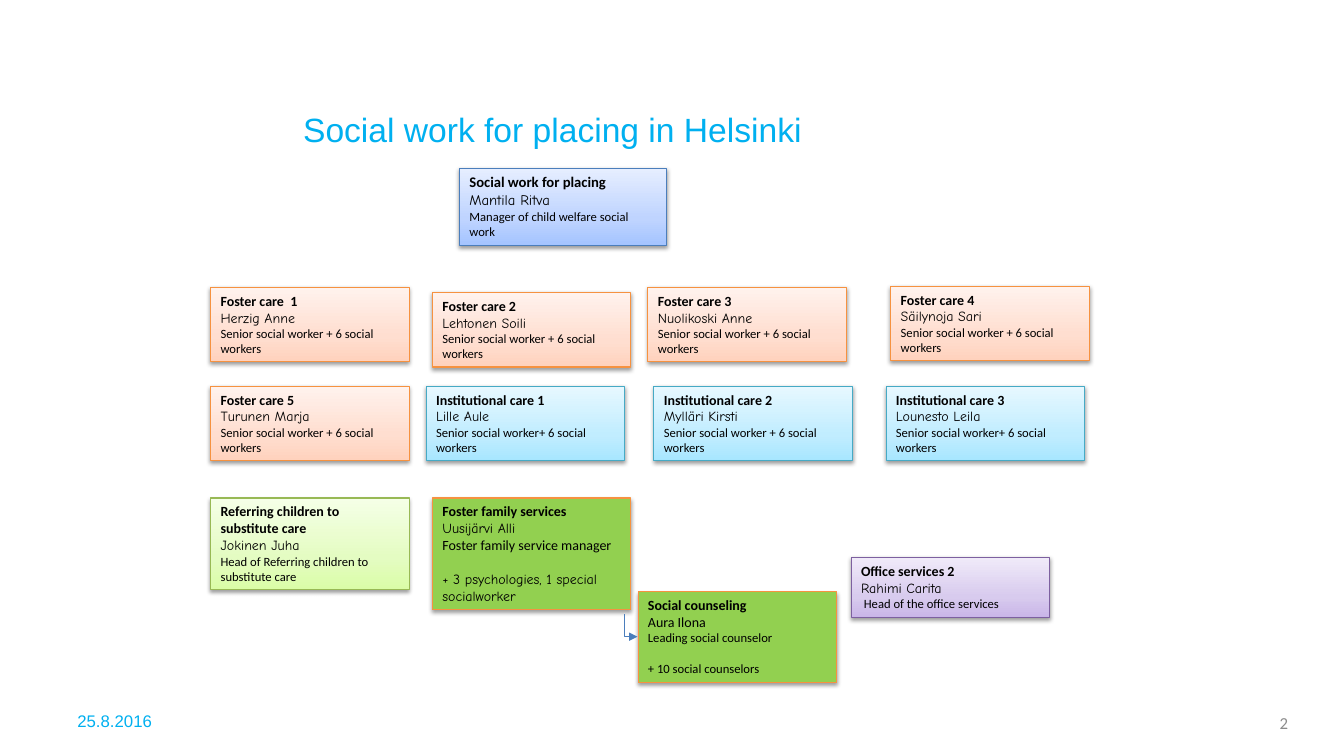
import copy

import lxml.etree
import pptx
import pptx.dml.color
import pptx.enum.shapes
import pptx.enum.text
import pptx.oxml.ns
import pptx.util

Cm = pptx.util.Cm
Pt = pptx.util.Pt
qn = pptx.oxml.ns.qn
rgb = pptx.dml.color.RGBColor.from_string

THEME = {
    "boxes": {
        "manager": {"fill": ("A4C4FF", "BFD4FF", "E6EEFF"), "line": "4B7EBC"},
        "foster": {"fill": ("FFD2BD", "FFDED0", "FFF2ED"), "line": "F69240"},
        "institution": {"fill": ("A7E6FF", "C1EDFF", "E7F8FF"), "line": "46AAC5"},
        "office": {"fill": ("C9B5E8", "D8CBEE", "F0EAF9"), "line": "7D60A0"},
        "referring": {"fill": ("DAFDA7", "E4FCC2", "F5FFE7"), "line": "98B955"},
        "family": {"fill": ("92D050",), "line": "F69240"},
    },
    "gradient_positions": (0, 0.35, 1),
    "connector": "4B7EBC",
    "line_width": 0.75,
    "text": {
        "lead_heading": {"name": "Calibri", "size": 10.5, "bold": True, "color": "000000"},
        "lead_person": {"name": "Comic Neue", "size": 10.5, "bold": False, "color": "000000"},
        "heading": {"name": "Calibri", "size": 10, "bold": True, "color": "000000"},
        "person": {"name": "Comic Neue", "size": 10, "bold": False, "color": "000000"},
        "plain": {"name": "Calibri", "size": 10, "bold": False, "color": "000000"},
        "role": {"name": "Calibri", "size": 9, "bold": False, "color": "000000"},
        "title": {"name": "Arial", "size": 24, "bold": False, "color": "00B0F0"},
        "date": {"name": "Arial", "size": 12, "bold": False, "color": "00B0F0"},
        "number": {"name": "Calibri", "size": 12, "bold": False, "color": "8C8C8C"},
    },
}
ANCHOR = pptx.enum.text.MSO_ANCHOR
ALIGN = pptx.enum.text.PP_ALIGN
BOX_WIDTH, BOX_HEIGHT = 5, 1.88


def write_lines(shape, lines, anchor=ANCHOR.TOP, alignment=ALIGN.LEFT):
    frame = shape.text_frame
    frame.word_wrap = True
    frame.vertical_anchor = anchor
    for index, (style, text, gap) in enumerate(lines):
        paragraph = frame.paragraphs[0] if index == 0 else frame.add_paragraph()
        paragraph.alignment = alignment
        if gap:
            paragraph.space_before = Pt(gap)
        run = paragraph.add_run()
        run.text = text
        values = THEME["text"][style]
        formats = {"name": values["name"], "size": Pt(values["size"]), "bold": values["bold"]}
        for key, value in formats.items():
            setattr(run.font, key, value)
        run.font.color.rgb = rgb(values["color"])


def add_box(slide, kind, left, top, width, height, lines):
    look = THEME["boxes"][kind]
    shape = slide.shapes.add_shape(
        pptx.enum.shapes.MSO_SHAPE.RECTANGLE, Cm(left), Cm(top), Cm(width), Cm(height))
    if len(look["fill"]) == 1:
        shape.fill.solid()
        shape.fill.fore_color.rgb = rgb(look["fill"][0])
    else:
        shape.fill.gradient()
        shape.fill.gradient_angle = 90
        stop_list = shape.element.spPr.find(".//" + qn("a:gsLst"))
        stop_list.insert(1, copy.deepcopy(stop_list[0]))
        for stop, position, color in zip(
                shape.fill.gradient_stops, THEME["gradient_positions"], look["fill"]):
            stop.position = position
            stop.color.rgb = rgb(color)
    shape.line.color.rgb = rgb(look["line"])
    shape.line.width = Pt(THEME["line_width"])
    shape.shadow.inherit = False
    shadow = lxml.etree.SubElement(
        shape.element.spPr.find(qn("a:effectLst")), qn("a:outerShdw"),
        blurRad=str(Pt(3.1)), dist=str(Pt(1.6)), dir="5400000", rotWithShape="0")
    color = lxml.etree.SubElement(shadow, qn("a:srgbClr"), val="000000")
    lxml.etree.SubElement(color, qn("a:alpha"), val="38000")
    write_lines(shape, lines)


presentation = pptx.Presentation()
presentation.slide_width = Cm(33.87)
presentation.slide_height = Cm(19.05)
slide = presentation.slides.add_slide(presentation.slide_layouts[6])

add_box(slide, "manager", 11.58, 4.24, 5.21, 1.95, [
    ("lead_heading", "Social work for placing", 0),
    ("lead_person", "Mantila Ritva", 0),
    ("role", "Manager of child welfare social work", 0),
])

teams = [
    ("foster", 5.31, 7.24, "Foster care  1", "Herzig Anne", "worker +"),
    ("foster", 10.9, 7.37, "Foster care 2", "Lehtonen Soili", "worker +"),
    ("foster", 16.33, 7.24, "Foster care 3", "Nuolikoski Anne", "worker +"),
    ("foster", 22.45, 7.21, "Foster care 4", "Säilynoja Sari", "worker +"),
    ("foster", 5.31, 9.73, "Foster care 5", "Turunen Marja", "worker +"),
    ("institution", 10.74, 9.73, "Institutional care 1", "Lille Aule", "worker+"),
    ("institution", 16.48, 9.73, "Institutional care 2", "Mylläri Kirsti", "worker +"),
    ("institution", 22.33, 9.73, "Institutional care 3", "Lounesto Leila", "worker+"),
]
for kind, left, top, heading, person, worker in teams:
    add_box(slide, kind, left, top, BOX_WIDTH, BOX_HEIGHT, [
        ("heading", heading, 0),
        ("person", person, 0),
        ("role", f"Senior social {worker} 6 social workers", 0),
    ])

services = [
    ("referring", 5.31, 12.55, 2.31, [
        ("heading", "Referring children to substitute care", 0),
        ("person", "Jokinen Juha", 0),
        ("role", "Head of Referring children to substitute care", 0),
    ]),
    ("family", 10.9, 12.55, 2.82, [
        ("heading", "Foster family services", 0),
        ("person", "Uusijärvi Alli", 0),
        ("plain", "Foster family service manager", 0),
        ("person", "+ 3 psychologies, 1 special socialworker", 12),
    ]),
    ("family", 16.08, 14.91, 2.29, [
        ("heading", "Social counseling", 0),
        ("plain", "Aura Ilona", 0),
        ("role", "Leading social counselor", 0),
        ("role", "+ 10 social counselors", 11),
    ]),
    ("office", 21.45, 14.05, 1.52, [
        ("heading", "Office services 2", 0),
        ("person", "Rahimi Carita", 0),
        ("role", " Head of the office services", 0),
    ]),
]
for kind, left, top, height, lines in services:
    add_box(slide, kind, left, top, BOX_WIDTH, height, lines)

connector = slide.shapes.add_connector(
    pptx.enum.shapes.MSO_CONNECTOR.ELBOW, Cm(16.18), Cm(15.6), Cm(15.62), Cm(15.93))
connector.line.color.rgb = rgb(THEME["connector"])
connector.line.width = Pt(THEME["line_width"])
properties = connector.element.spPr
properties.find(qn("a:xfrm")).set("rot", "16200000")
properties.find(qn("a:prstGeom")).set("prst", "bentConnector2")
lxml.etree.SubElement(properties.find(qn("a:ln")), qn("a:tailEnd"), type="triangle")
lxml.etree.SubElement(properties, qn("a:effectLst"))

labels = [
    ("title", "Social work for placing in Helsinki", 7.39, 2.62, 18.8, 1.27, ANCHOR.TOP, ALIGN.LEFT),
    ("date", "25.8.2016", 1.7, 17.65, 7.9, 1.02, ANCHOR.MIDDLE, ALIGN.LEFT),
    ("number", "2", 24.94, 17.7, 7.77, 1.02, ANCHOR.MIDDLE, ALIGN.RIGHT),
]
for style, text, left, top, width, height, anchor, alignment in labels:
    label = slide.shapes.add_textbox(Cm(left), Cm(top), Cm(width), Cm(height))
    write_lines(label, [(style, text, 0)], anchor, alignment)

presentation.save("out.pptx")
